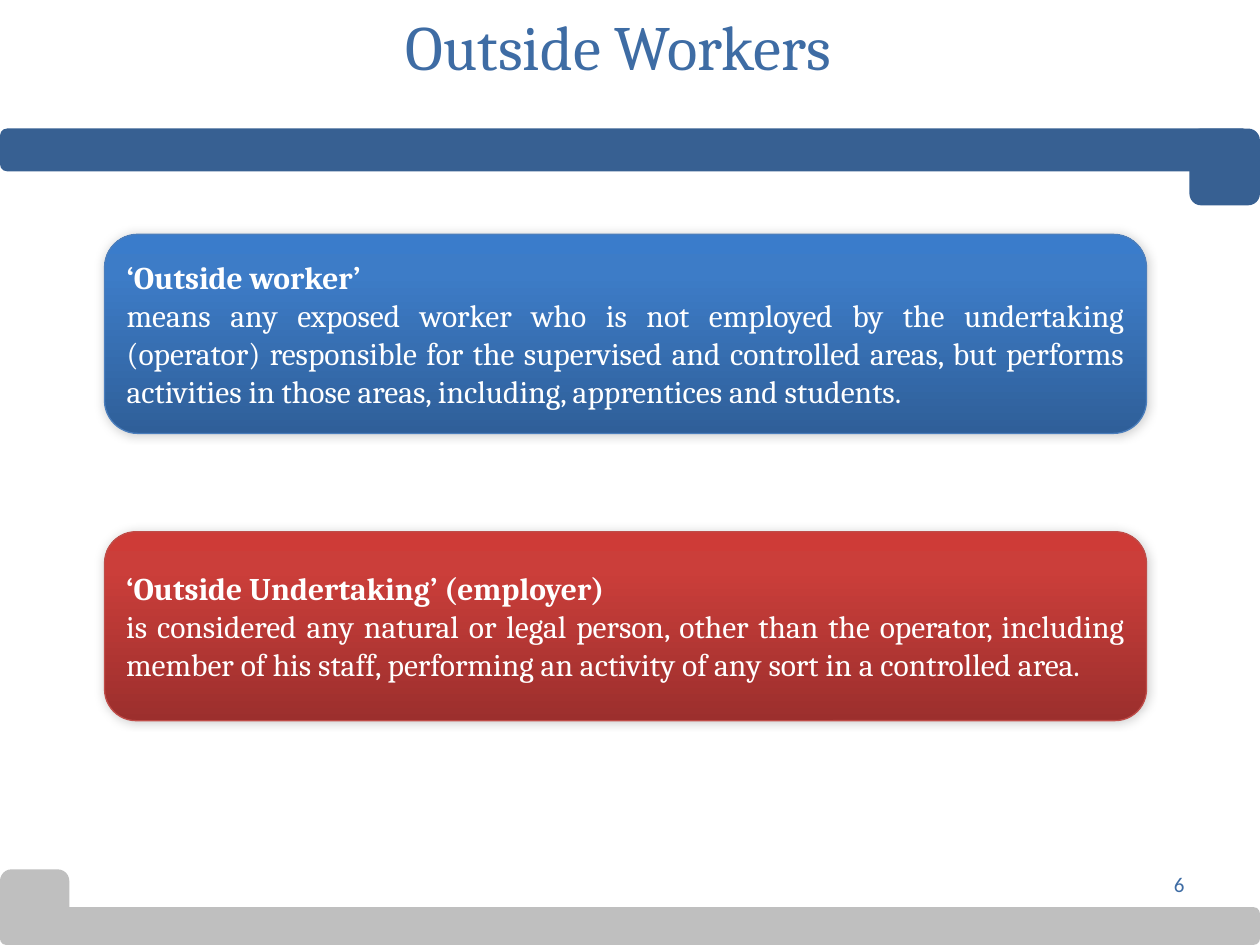
from lxml.etree import SubElement
from pptx import Presentation
from pptx.dml.color import RGBColor
from pptx.enum.shapes import MSO_SHAPE as Shape
from pptx.enum.text import MSO_ANCHOR as Anchor, PP_ALIGN as Align
from pptx.oxml import parse_xml
from pptx.oxml.ns import nsdecls, qn
from pptx.util import Inches, Pt

WIDE, HIGH = 10, 7.5
BLUE, GREY, INK, WHITE = "376092", "BFBFBF", "3E6CA4", "FFFFFF"
LEFT, SPAN = 0.83, 8.27

BARS = [
    (0, 1.02, 9.92, 0.34, BLUE),
    (9.44, 1.02, 0.56, 0.61, BLUE),
    (0, 7.2, WIDE, 0.3, GREY),
    (0, 6.9, 0.55, 0.57, GREY),
]
CARDS = [
    (1.86, 1.58, ("2F5F99", "3D7CC7", "3A7CCB"), "4B7EBC",
     "‘Outside worker’",
     "means any exposed worker who is not employed by the undertaking "
     "(operator) responsible for the supervised and controlled areas, but "
     "performs activities in those areas, including, apprentices and "
     "students."),
    (4.22, 1.5, ("9C2F2D", "CB3E3A", "CE3B37"), "BF4C48",
     "‘Outside Undertaking’ (employer)",
     "is considered any natural or legal person, other than the operator, "
     "including member of his staff, performing an activity of any sort in a "
     "controlled area."),
]


def color(target, code):
    target.rgb = RGBColor.from_string(code)


def box(*sides):
    return [Inches(side) for side in sides]


def style(para, size, face, code, align, bold=False):
    para.alignment = align
    for run in para.runs:
        font = run.font
        font.size, font.name, font.bold = Pt(size), face, bold
        color(font.color, code)


def add_round(slide, *sides):
    shape = slide.shapes.add_shape(Shape.ROUNDED_RECTANGLE, *box(*sides))
    shape.shadow.inherit = False
    return shape


def add_bar(slide, left, top, width, height, code):
    bar = add_round(slide, left, top, width, height)
    bar.fill.solid()
    color(bar.fill.fore_color, code)
    bar.line.fill.background()


def shade(shape, codes):
    """Fill with three stops running from bottom to top."""
    shape.fill.gradient()
    shape.fill.gradient_angle = 90
    stops = shape._element.spPr.find(qn("a:gradFill")).find(qn("a:gsLst"))
    for stop in list(stops):
        stops.remove(stop)
    for share, code in zip((0, 80, 100), codes):
        stop = SubElement(stops, qn("a:gs"), pos=str(share * 1000))
        SubElement(stop, qn("a:srgbClr"), val=code)


def add_glow(shape):
    """Put a soft shadow around the shape."""
    effects = shape._element.spPr.find(qn("a:effectLst"))
    effects.append(parse_xml(
        f'<a:outerShdw {nsdecls("a")} blurRad="{Pt(6)}" dist="0" '
        f'dir="{225 * 60000}" rotWithShape="0"><a:srgbClr val="000000">'
        '<a:alpha val="20000"/></a:srgbClr></a:outerShdw>'))


def add_card(slide, top, height, codes, edge, term, meaning):
    card = add_round(slide, LEFT, top, SPAN, height)
    shade(card, codes)
    add_glow(card)
    color(card.line.color, edge)
    card.line.width = Pt(0.75)
    frame = card.text_frame
    frame.word_wrap = True
    frame.vertical_anchor = Anchor.MIDDLE
    frame.text = f"{term}\n{meaning}"
    head, body = frame.paragraphs
    style(head, 18, "Cambria", WHITE, Align.LEFT, True)
    style(body, 18, "Cambria", WHITE, Align.JUSTIFY)


def set_title(slide, text):
    title = slide.shapes.title
    title.left, title.top, title.width, title.height = box(0.41, 0.01, 9, 1.01)
    frame = title.text_frame
    frame.text = text
    frame.vertical_anchor = Anchor.TOP
    style(frame.paragraphs[0], 36, "Cambria", INK, Align.CENTER)


def add_number(slide, text):
    frame = slide.shapes.add_textbox(*box(7.17, 6.82, 2.33, 0.4)).text_frame
    frame.word_wrap = True
    frame.vertical_anchor = Anchor.MIDDLE
    frame.text = text
    style(frame.paragraphs[0], 12, "Calibri", INK, Align.RIGHT)


def main():
    deck = Presentation()
    deck.slide_width, deck.slide_height = box(WIDE, HIGH)
    slide = deck.slides.add_slide(deck.slide_layouts[5])
    for bar in BARS:
        add_bar(slide, *bar)
    set_title(slide, "Outside Workers")
    add_number(slide, "6")
    for card in CARDS:
        add_card(slide, *card)
    deck.save("out.pptx")


if __name__ == "__main__":
    main()
